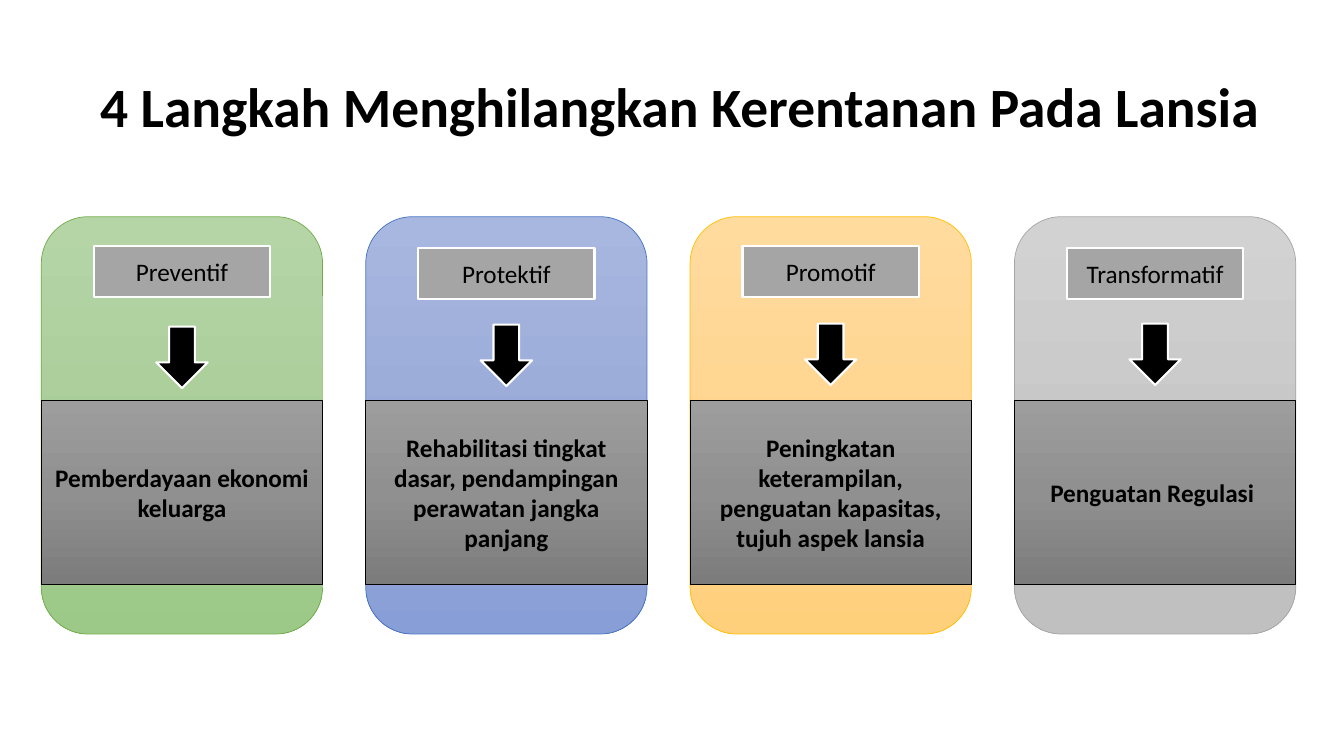
"""Build a slide of four steps that remove vulnerability among the elderly."""
from copy import deepcopy

from pptx import Presentation
from pptx.dml.color import RGBColor
from pptx.enum.shapes import MSO_SHAPE
from pptx.enum.text import MSO_ANCHOR, MSO_AUTO_SIZE, PP_ALIGN
from pptx.oxml.ns import qn
from pptx.util import Inches, Pt

ROUNDED = MSO_SHAPE.ROUNDED_RECTANGLE
RECTANGLE = MSO_SHAPE.RECTANGLE
DOWN_ARROW = MSO_SHAPE.DOWN_ARROW
MIDDLE, BOTTOM = MSO_ANCHOR.MIDDLE, MSO_ANCHOR.BOTTOM
CENTER = PP_ALIGN.CENTER
NO_AUTOFIT = MSO_AUTO_SIZE.NONE

FONT = "Calibri"
TITLE = "4 Langkah Menghilangkan Kerentanan Pada Lansia"
BLACK, WHITE, GRAY = "000000", "FFFFFF", "A5A5A5"
ACTION_GRADIENT = ("9D9D9D", "909090", "7C7C7C")

STEPS = [
    {"label": "Preventif", "action": "Pemberdayaan ekonomi keluarga",
     "gradient": ("B5D5A7", "AACE9A", "9CC987"), "line": "70AD47",
     "label_top": 2.44, "arrow_top": 3.24},
    {"label": "Protektif",
     "action": "Rehabilitasi tingkat dasar, pendampingan perawatan jangka panjang",
     "gradient": ("A8B7DF", "9AABD9", "889ED7"), "line": "4472C4",
     "label_top": 2.46, "arrow_top": 3.22},
    {"label": "Promotif",
     "action": "Peningkatan keterampilan, penguatan kapasitas, tujuh aspek lansia",
     "gradient": ("FFDB9E", "FFD590", "FFD07C"), "line": "FFC000",
     "label_top": 2.44, "arrow_top": 3.21},
    {"label": "Transformatif", "action": "Penguatan Regulasi ",
     "gradient": ("D2D2D2", "C8C8C8", "C0C0C0"), "line": GRAY,
     "label_top": 2.46, "arrow_top": 3.21},
]

FIRST_LEFT, PITCH = 0.41, 3.217
CARD_TOP, CARD_WIDTH, CARD_HEIGHT = 2.15, 2.79, 4.14
LABEL_WIDTH, LABEL_HEIGHT = 1.75, 0.51
ARROW_WIDTH, ARROW_HEIGHT = 0.51, 0.61
ACTION_TOP, ACTION_HEIGHT = 3.97, 1.83


def color(value):
    return RGBColor.from_string(value)


def fill_gradient(shape, colors):
    shape.fill.gradient()
    shape.fill.gradient_angle = 270
    stop_list = shape._element.spPr.find(qn("a:gradFill")).find(qn("a:gsLst"))
    stop_list.insert(1, deepcopy(stop_list[0]))
    for index, (stop, value) in enumerate(zip(shape.fill.gradient_stops, colors)):
        stop.position = index / 2
        stop.color.rgb = color(value)


def write_text(shape, text, size, bold, anchor):
    frame = shape.text_frame
    frame.text = text
    frame.word_wrap = True
    frame.auto_size = NO_AUTOFIT
    frame.vertical_anchor = anchor
    paragraph = frame.paragraphs[0]
    paragraph.alignment = CENTER
    font = paragraph.runs[0].font
    font.name, font.size, font.bold = FONT, Pt(size), bold
    font.color.rgb = color(BLACK)


def add_box(slide, kind, center, top, width, height, fill, line, line_width):
    shape = slide.shapes.add_shape(kind, Inches(center - width / 2), Inches(top),
                                   Inches(width), Inches(height))
    shape.shadow.inherit = False
    if isinstance(fill, tuple):
        fill_gradient(shape, fill)
    else:
        shape.fill.solid()
        shape.fill.fore_color.rgb = color(fill)
    shape.line.color.rgb = color(line)
    shape.line.width = Pt(line_width)
    return shape


def add_title(slide):
    title = slide.shapes.title
    title.left, title.top = Inches(0.83), Inches(0.46)
    title.width, title.height = Inches(11.83), Inches(0.97)
    write_text(title, TITLE, 39.6, True, BOTTOM)
    title.text_frame.paragraphs[0].line_spacing = 0.9


def add_step(slide, step, center):
    add_box(slide, ROUNDED, center, CARD_TOP, CARD_WIDTH, CARD_HEIGHT,
            step["gradient"], step["line"], 0.5)
    label = add_box(slide, RECTANGLE, center, step["label_top"], LABEL_WIDTH,
                    LABEL_HEIGHT, GRAY, WHITE, 1.5)
    write_text(label, step["label"], 18, False, MIDDLE)
    add_box(slide, DOWN_ARROW, center, step["arrow_top"], ARROW_WIDTH,
            ARROW_HEIGHT, BLACK, WHITE, 1.5)
    action = add_box(slide, RECTANGLE, center, ACTION_TOP, CARD_WIDTH,
                     ACTION_HEIGHT, ACTION_GRADIENT, BLACK, 0.5)
    write_text(action, step["action"], 18, True, MIDDLE)


def main():
    presentation = Presentation()
    presentation.slide_width = Inches(13.33)
    presentation.slide_height = Inches(7.5)
    slide = presentation.slides.add_slide(presentation.slide_layouts[5])
    add_title(slide)
    for index, step in enumerate(STEPS):
        add_step(slide, step, FIRST_LEFT + index * PITCH + CARD_WIDTH / 2)
    presentation.save("out.pptx")


if __name__ == "__main__":
    main()
